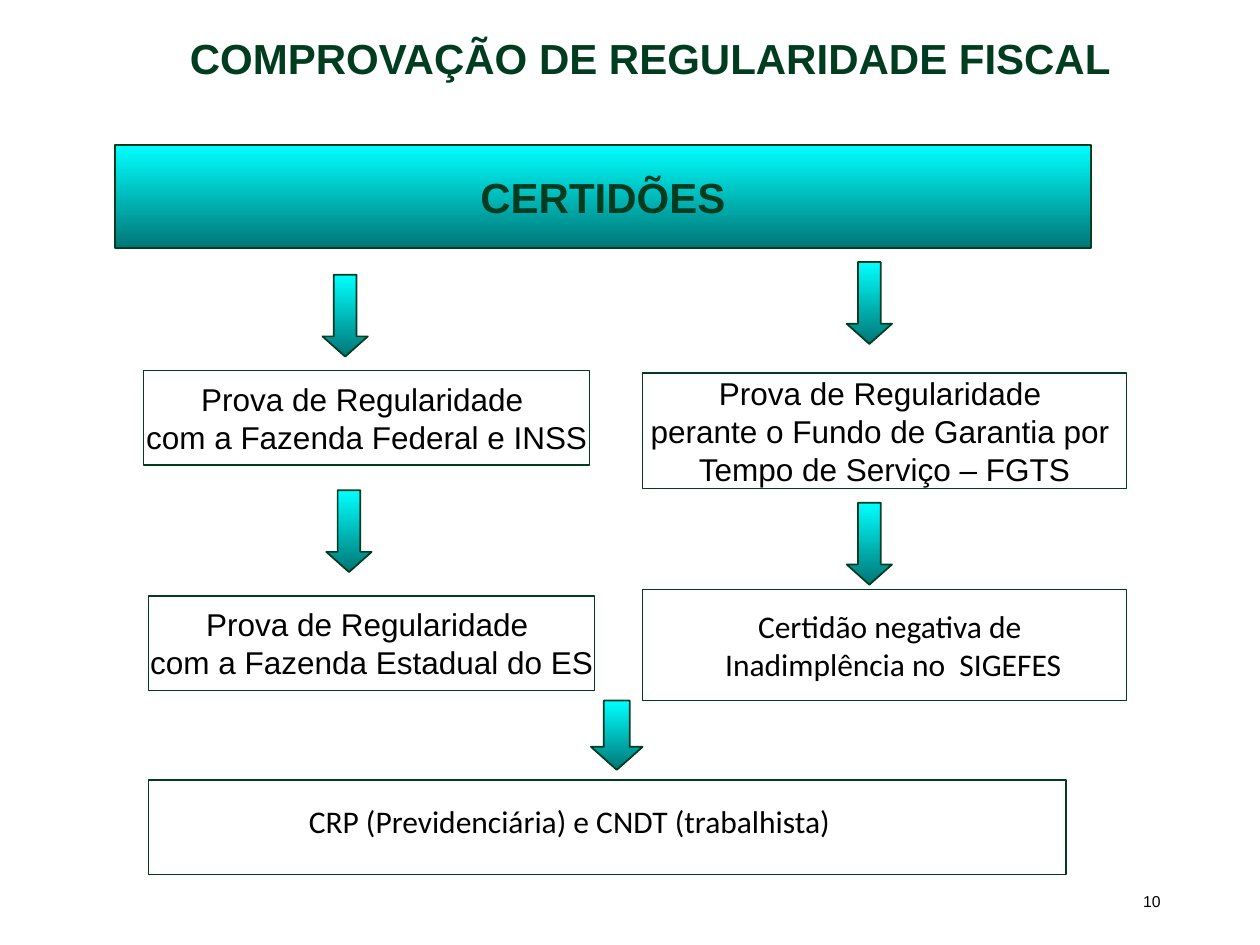
from dataclasses import dataclass

from pptx import Presentation
from pptx.dml.color import RGBColor
from pptx.enum.shapes import MSO_SHAPE
from pptx.enum.text import MSO_ANCHOR, MSO_AUTO_SIZE, PP_ALIGN
from pptx.util import Inches, Pt


@dataclass(frozen=True)
class Theme:
    green: RGBColor = RGBColor(0x00, 0x3C, 0x20)
    black: RGBColor = RGBColor(0, 0, 0)
    cyan: RGBColor = RGBColor(0x00, 0xFF, 0xFF)
    teal: RGBColor = RGBColor(0x00, 0x76, 0x76)
    font: str = "Arial"
    plain: str = "Calibri"
    head: int = 24
    body: int = 18
    small: int = 9


theme = Theme()


def write(shape, text, size=theme.body, color=theme.black, font=theme.font,
          bold=False, align=PP_ALIGN.CENTER, anchor=MSO_ANCHOR.MIDDLE, wrap=True):
    frame = shape.text_frame
    frame.text = text
    frame.auto_size = MSO_AUTO_SIZE.NONE
    frame.word_wrap = wrap
    frame.vertical_anchor = anchor
    for para in frame.paragraphs:
        para.alignment = align
        for run in para.runs:
            run.font.size = Pt(size)
            run.font.name = font
            run.font.bold = bold
            run.font.color.rgb = color


def draw(kind, box, shaded=False):
    """Add an outlined shape, either hollow or shaded from cyan to teal."""
    shape = slide.shapes.add_shape(kind, *map(Inches, box))
    shape.shadow.inherit = False
    shape.line.color.rgb = theme.green
    shape.line.width = Pt(1 if shaded else 0.75)
    if shaded:
        shape.fill.gradient()
        shape.fill.gradient_angle = 270
        for stop, color in zip(shape.fill.gradient_stops, (theme.cyan, theme.teal)):
            stop.color.rgb = color
    else:
        shape.fill.background()
    return shape


deck = Presentation()
deck.slide_width, deck.slide_height = Inches(10), Inches(7.5)
slide = deck.slides.add_slide(deck.slide_layouts[5])

# Title and banner
title = slide.shapes.title
title.left, title.top = Inches(1.06), Inches(0.21)
title.width, title.height = Inches(8.11), Inches(0.5)
write(title, " COMPROVAÇÃO DE REGULARIDADE FISCAL", theme.head, theme.green,
      bold=True, anchor=MSO_ANCHOR.TOP)

banner = draw(MSO_SHAPE.RECTANGLE, (0.91, 1.15, 7.75, 0.82), shaded=True)
write(banner, "CERTIDÕES", theme.head, theme.green, bold=True, wrap=False)

# Certificate boxes
boxes = [
    ((1.14, 2.94, 3.54, 0.75), "Prova de Regularidade \ncom a Fazenda Federal e INSS"),
    ((1.18, 4.73, 3.54, 0.75), "Prova de Regularidade \ncom a Fazenda Estadual do ES"),
    ((5.1, 2.96, 3.84, 0.92), "Prova de Regularidade \nperante o Fundo de Garantia por \n"
                              "Tempo de Serviço – FGTS"),
    ((5.1, 4.68, 3.84, 0.88), ""),
    ((1.18, 6.19, 7.28, 0.75), ""),
]
for box, text in boxes:
    shape = draw(MSO_SHAPE.RECTANGLE, box)
    if text:
        write(shape, text, wrap=False)

# Arrows between the steps
arrows = [(2.56, 2.18, 0.36, 0.65), (6.72, 2.08, 0.36, 0.65), (2.59, 3.89, 0.36, 0.65),
          (6.72, 3.99, 0.36, 0.65), (4.69, 5.56, 0.41, 0.55)]
for box in arrows:
    arrow = draw(MSO_SHAPE.DOWN_ARROW, box, shaded=True)
    arrow.adjustments[0], arrow.adjustments[1] = 0.5, 0.445

# Labels over the two open boxes
labels = [
    ((4.59, 4.77, 5, 0.71), "Certidão negativa de \nInadimplência no  SIGEFES"),
    ((2.02, 6.32, 5, 0.4), "CRP (Previdenciária) e CNDT (trabalhista)"),
]
for box, text in labels:
    label = slide.shapes.add_textbox(*map(Inches, box))
    write(label, text, font=theme.plain, anchor=MSO_ANCHOR.TOP)

number = slide.shapes.add_textbox(Inches(7.06), Inches(6.95), Inches(2.25), Inches(0.4))
write(number, "10", theme.small, align=PP_ALIGN.RIGHT)

deck.save("out.pptx")
